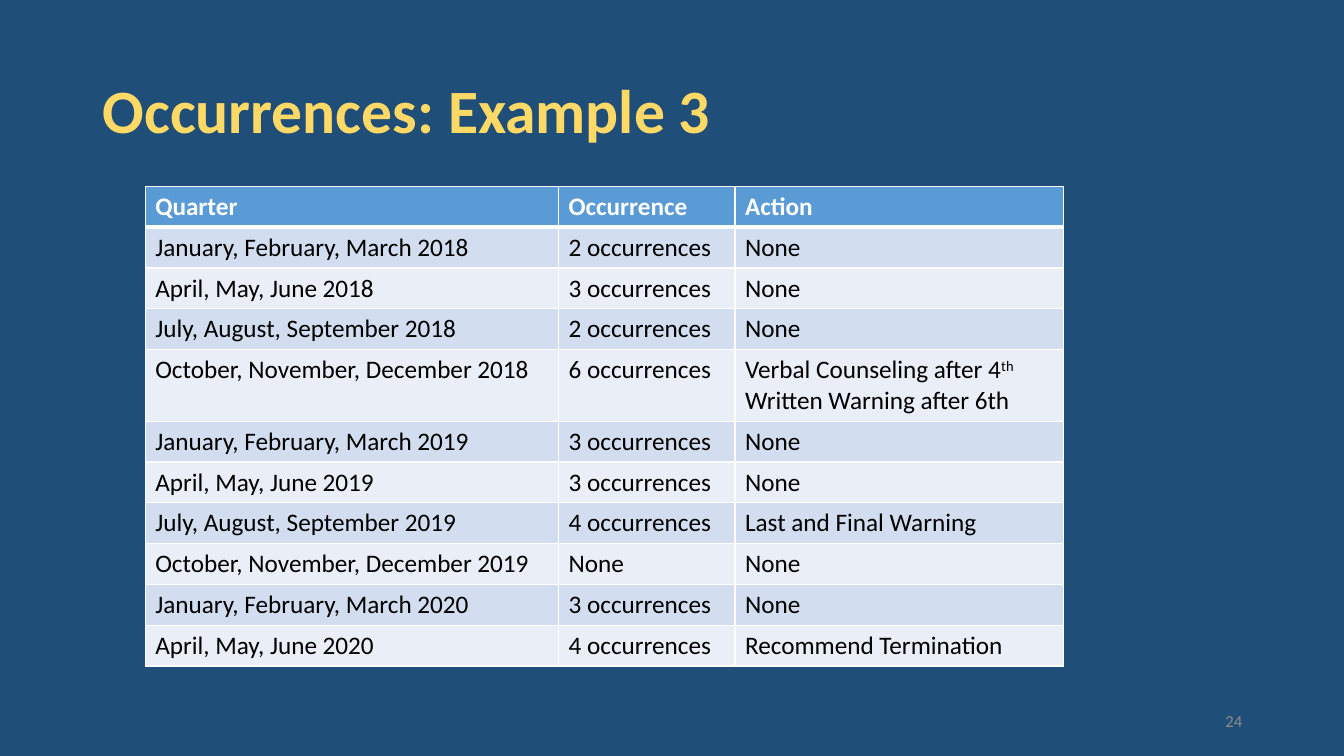
from dataclasses import dataclass

from lxml import etree
from pptx import Presentation
from pptx.dml.color import RGBColor
from pptx.enum import text as t
from pptx.oxml import ns
from pptx.util import Inches, Pt


@dataclass(frozen=True)
class Theme:
    font: str = "Calibri"
    background: str = "1F4E79"
    title: str = "FFD966"
    header: str = "5B9BD5"
    bands: tuple[str, str] = ("D2DEEF", "EAEFF7")
    body: str = "000000"
    light: str = "FFFFFF"
    muted: str = "8C8C8C"
    title_size: int = 44
    table_size: int = 18
    number_size: int = 12
    rule: int = 1
    header_rule: int = 3


@dataclass(frozen=True)
class Piece:
    text: str
    superscript: bool = False


@dataclass(frozen=True)
class Style:
    size: int
    color: str
    bold: bool = False


@dataclass(frozen=True)
class Label:
    text: str
    box: tuple[float, float, float, float]
    style: Style
    align: t.PP_ALIGN
    line_spacing: float = 1.0


@dataclass(frozen=True)
class QuarterRecord:
    quarter: str
    occurrence: str
    action: tuple[tuple[Piece, ...], ...] = ((Piece("None"),),)


THEME = Theme()

LABELS = (
    Label("Occurrences: Example 3", (0.92, 0.4, 11.5, 1.45),
          Style(THEME.title_size, THEME.title, True), t.PP_ALIGN.LEFT, 0.9),
    Label("24", (9.42, 6.95, 3, 0.4),
          Style(THEME.number_size, THEME.muted), t.PP_ALIGN.RIGHT),
)

RECORDS = (
    QuarterRecord("Quarter", "Occurrence", ((Piece("Action"),),)),
    QuarterRecord("January, February, March 2018", "2 occurrences"),
    QuarterRecord("April, May, June 2018", "3 occurrences"),
    QuarterRecord("July, August, September 2018", "2 occurrences"),
    QuarterRecord("October, November, December 2018", "6 occurrences",
                  ((Piece("Verbal Counseling after 4"), Piece("th", True)),
                   (Piece("Written Warning after 6th"),))),
    QuarterRecord("January, February, March 2019", "3 occurrences"),
    QuarterRecord("April, May, June 2019", "3 occurrences"),
    QuarterRecord("July, August, September 2019", "4 occurrences",
                  ((Piece("Last and Final Warning"),),)),
    QuarterRecord("October, November, December 2019", "None"),
    QuarterRecord("January, February, March 2020", "3 occurrences"),
    QuarterRecord("April, May, June 2020", "4 occurrences",
                  ((Piece("Recommend Termination"),),)),
)

TABLE_LEFT, TABLE_TOP, TABLE_HEIGHT = 1.44, 1.85, 4.76
COLUMN_WIDTHS = (4.1, 1.75, 3.26)
TWO_LINE_HEIGHT = 0.71


def add_piece(paragraph, piece: Piece, style: Style) -> None:
    run = paragraph.add_run()
    run.text = piece.text
    run.font.name = THEME.font
    run.font.size = Pt(style.size)
    run.font.bold = style.bold
    run.font.color.rgb = RGBColor.from_string(style.color)
    if piece.superscript:
        run._r.get_or_add_rPr().set("baseline", "30000")


def add_label(slide, label: Label) -> None:
    frame = slide.shapes.add_textbox(*map(Inches, label.box)).text_frame
    frame.word_wrap = True
    frame.vertical_anchor = t.MSO_ANCHOR.MIDDLE
    paragraph = frame.paragraphs[0]
    paragraph.alignment = label.align
    paragraph.line_spacing = label.line_spacing
    add_piece(paragraph, Piece(label.text), label.style)


def set_borders(cell, top: int, bottom: int) -> None:
    """Rule all four sides; call before filling, as lines precede the fill."""
    properties = cell._tc.get_or_add_tcPr()
    widths = {"L": THEME.rule, "R": THEME.rule, "T": top, "B": bottom}
    for side, width in widths.items():
        line = etree.SubElement(properties, ns.qn(f"a:ln{side}"), w=str(Pt(width)))
        fill = etree.SubElement(line, ns.qn("a:solidFill"))
        etree.SubElement(fill, ns.qn("a:srgbClr"), val=THEME.light)


def fill_cell(cell, lines: tuple[tuple[Piece, ...], ...], row: int) -> None:
    is_header = row == 0
    set_borders(cell,
                top=THEME.header_rule if row == 1 else THEME.rule,
                bottom=THEME.header_rule if is_header else THEME.rule)
    cell.fill.solid()
    cell.fill.fore_color.rgb = RGBColor.from_string(
        THEME.header if is_header else THEME.bands[(row - 1) % 2])
    style = Style(THEME.table_size, THEME.light if is_header else THEME.body, is_header)
    frame = cell.text_frame
    for index, line in enumerate(lines):
        paragraph = frame.add_paragraph() if index else frame.paragraphs[0]
        for piece in line:
            add_piece(paragraph, piece, style)


def add_occurrence_table(slide) -> None:
    table = slide.shapes.add_table(
        len(RECORDS), len(COLUMN_WIDTHS), Inches(TABLE_LEFT), Inches(TABLE_TOP),
        Inches(sum(COLUMN_WIDTHS)), Inches(TABLE_HEIGHT)).table
    for column, width in zip(table.columns, COLUMN_WIDTHS):
        column.width = Inches(width)
    one_line_height = (TABLE_HEIGHT - TWO_LINE_HEIGHT) / (len(RECORDS) - 1)
    for row, record in enumerate(RECORDS):
        table.rows[row].height = Inches(
            TWO_LINE_HEIGHT if len(record.action) > 1 else one_line_height)
        entries = (((Piece(record.quarter),),), ((Piece(record.occurrence),),),
                   record.action)
        for column, lines in enumerate(entries):
            fill_cell(table.cell(row, column), lines, row)


def main() -> None:
    presentation = Presentation()
    presentation.slide_width = Inches(13.33)
    presentation.slide_height = Inches(7.5)
    slide = presentation.slides.add_slide(presentation.slide_layouts[6])
    slide.background.fill.solid()
    slide.background.fill.fore_color.rgb = RGBColor.from_string(THEME.background)
    for label in LABELS:
        add_label(slide, label)
    add_occurrence_table(slide)
    presentation.save("out.pptx")


if __name__ == "__main__":
    main()
